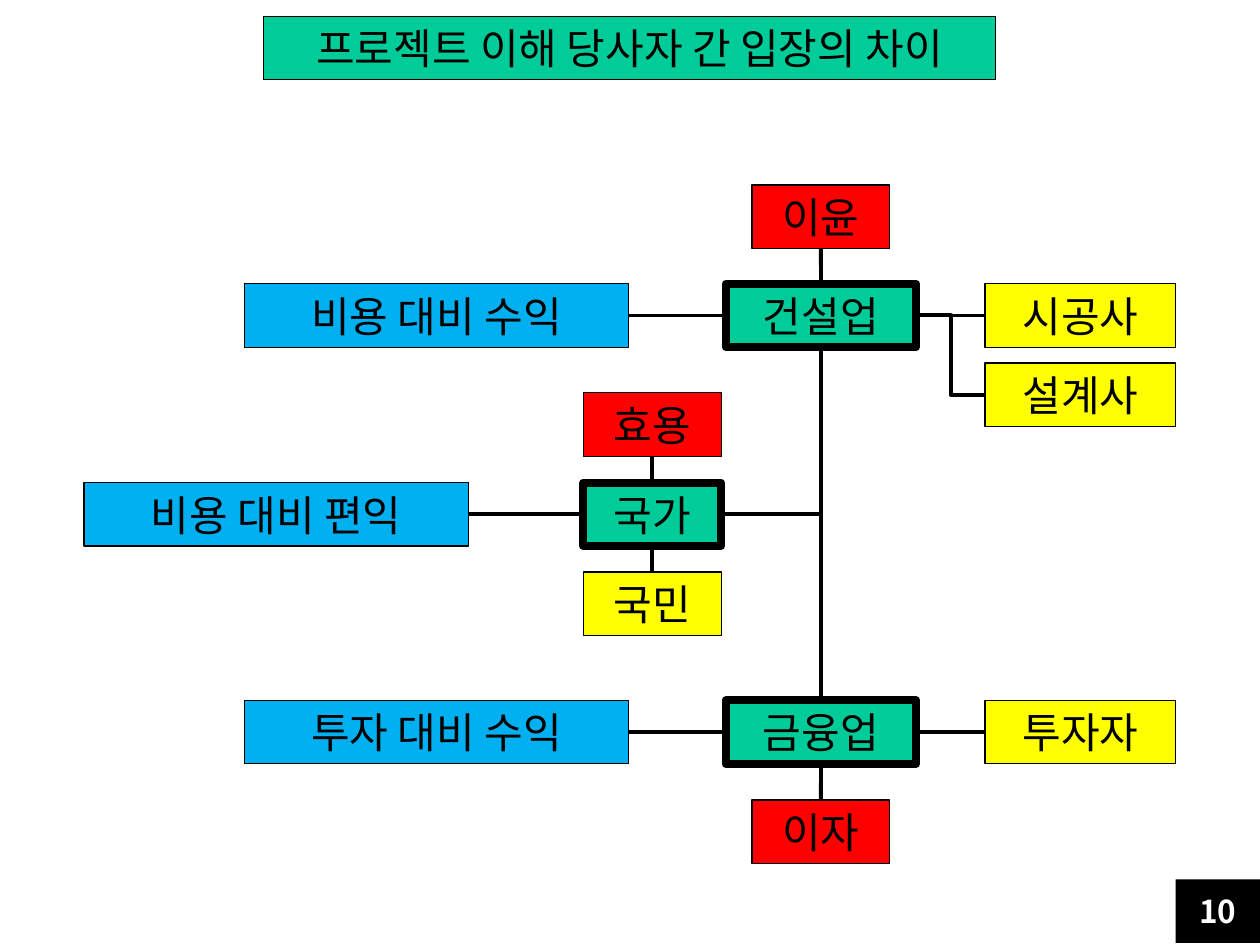
from dataclasses import dataclass

from lxml.etree import SubElement
from pptx import Presentation
from pptx.dml.color import RGBColor
from pptx.enum.shapes import MSO_CONNECTOR, MSO_SHAPE
from pptx.enum.text import MSO_ANCHOR, MSO_AUTO_SIZE, PP_ALIGN
from pptx.oxml.ns import qn
from pptx.util import Cm, Pt


@dataclass(frozen=True)
class Theme:
    font: str = "Noto Sans CJK KR"
    black: str = "000000"
    white: str = "FFFFFF"
    green: str = "00CC99"
    yellow: str = "FFFF00"
    blue: str = "00B0F0"
    red: str = "FF0000"
    body: float = 24
    small: float = 18
    thin: float = 0.75
    wire: float = 2.25
    thick: float = 4.5


THEME = Theme()
HIGH = 1.28
WIDE, MID, SLIM = 7.75, 3.84, 2.78
TOP, LEFT, BOTTOM, RIGHT = range(4)
FRAME = {"word_wrap": False, "auto_size": MSO_AUTO_SIZE.NONE,
         "vertical_anchor": MSO_ANCHOR.MIDDLE}

# Centres of the columns, and top edges of the rows
SPINE, STATE, SIDE = 16.55, 13.15, 21.78
BUILD, NATION, BANK = 5.72, 9.73, 14.12

# Label, fill, centre, top, width
BOXES = [
    ("건설업", THEME.green, SPINE, BUILD, MID),
    ("금융업", THEME.green, SPINE, BANK, MID),
    ("국가", THEME.green, STATE, NATION, SLIM),
    ("시공사", THEME.yellow, SIDE, BUILD, MID),
    ("설계사", THEME.yellow, SIDE, 7.32, MID),
    ("투자자", THEME.yellow, SIDE, BANK, MID),
    ("국민", THEME.yellow, STATE, 11.53, SLIM),
    ("비용 대비 편익", THEME.blue, 5.57, NATION, WIDE),
    ("비용 대비 수익", THEME.blue, 8.8, BUILD, WIDE),
    ("투자 대비 수익", THEME.blue, 8.8, BANK, WIDE),
    ("이윤", THEME.red, SPINE, 3.73, SLIM),
    ("이자", THEME.red, SPINE, 16.13, SLIM),
    ("효용", THEME.red, STATE, 7.92, SLIM),
]

# Start box and side, end box and side
LINKS = [
    ("건설업", RIGHT, "시공사", LEFT),
    ("건설업", TOP, "이윤", BOTTOM),
    ("건설업", BOTTOM, "금융업", TOP),
    ("건설업", LEFT, "비용 대비 수익", RIGHT),
    ("금융업", RIGHT, "투자자", LEFT),
    ("금융업", BOTTOM, "이자", TOP),
    ("금융업", LEFT, "투자 대비 수익", RIGHT),
    ("국가", TOP, "효용", BOTTOM),
    ("국가", BOTTOM, "국민", TOP),
    ("국가", LEFT, "비용 대비 편익", RIGHT),
]


def put(item, values):
    for name, value in values.items():
        setattr(item, name, value)


def paint(shape, fill, weight):
    shape.fill.solid()
    shape.fill.fore_color.rgb = RGBColor.from_string(fill)
    if weight:
        shape.line.color.rgb = RGBColor.from_string(THEME.black)
        shape.line.width = Pt(weight)
    else:
        shape.line.fill.background()


def write(shape, text, size=THEME.body, color=THEME.black, bold=False):
    put(shape.text_frame, FRAME)
    line = shape.text_frame.paragraphs[0]
    line.alignment = PP_ALIGN.CENTER
    run = line.add_run()
    run.text = text
    put(run.font, {"name": THEME.font, "size": Pt(size), "bold": bold})
    run.font.color.rgb = RGBColor.from_string(color)
    # Korean glyphs take the East Asian typeface
    SubElement(run.font._element, qn("a:ea"), typeface=THEME.font)


def head(slide, text):
    title = slide.shapes.title
    put(title, {"left": Cm(5.31), "top": Cm(0.33),
                "width": Cm(14.76), "height": Cm(HIGH)})
    paint(title, THEME.green, THEME.thin)
    write(title, text)


def box(slide, fill, mid, top, width, weight):
    shape = slide.shapes.add_shape(
        MSO_SHAPE.RECTANGLE, Cm(mid - width / 2), Cm(top), Cm(width), Cm(HIGH))
    shape.shadow.inherit = False
    paint(shape, fill, weight)
    return shape


def link(slide, start, side, end=None, face=None, kind=MSO_CONNECTOR.STRAIGHT):
    """Join two boxes, or run level from one box to the spine."""
    level = start.top + start.height // 2
    wire = slide.shapes.add_connector(kind, Cm(SPINE), level, Cm(SPINE), level)
    wire.begin_connect(start, side)
    if end is not None:
        wire.end_connect(end, face)
    wire.line.color.rgb = RGBColor.from_string(THEME.black)
    wire.line.width = Pt(THEME.wire)
    SubElement(wire._element.spPr, qn("a:effectLst"))


def main():
    deck = Presentation()
    put(deck, {"slide_width": Cm(25.4), "slide_height": Cm(19.05)})
    slide = deck.slides.add_slide(deck.slide_layouts[5])
    head(slide, "프로젝트 이해 당사자 간 입장의 차이")

    nodes = {}
    for text, fill, mid, top, width in BOXES:
        weight = THEME.thick if fill == THEME.green else THEME.thin
        nodes[text] = box(slide, fill, mid, top, width, weight)
        write(nodes[text], text)

    for start, side, end, face in LINKS:
        link(slide, nodes[start], side, nodes[end], face)
    link(slide, nodes["건설업"], RIGHT, nodes["설계사"], LEFT, MSO_CONNECTOR.ELBOW)
    link(slide, nodes["국가"], RIGHT)

    page = box(slide, THEME.black, 24.55, 17.73, 1.7, 0)
    write(page, "10", THEME.small, THEME.white, True)
    deck.save("out.pptx")


if __name__ == "__main__":
    main()
